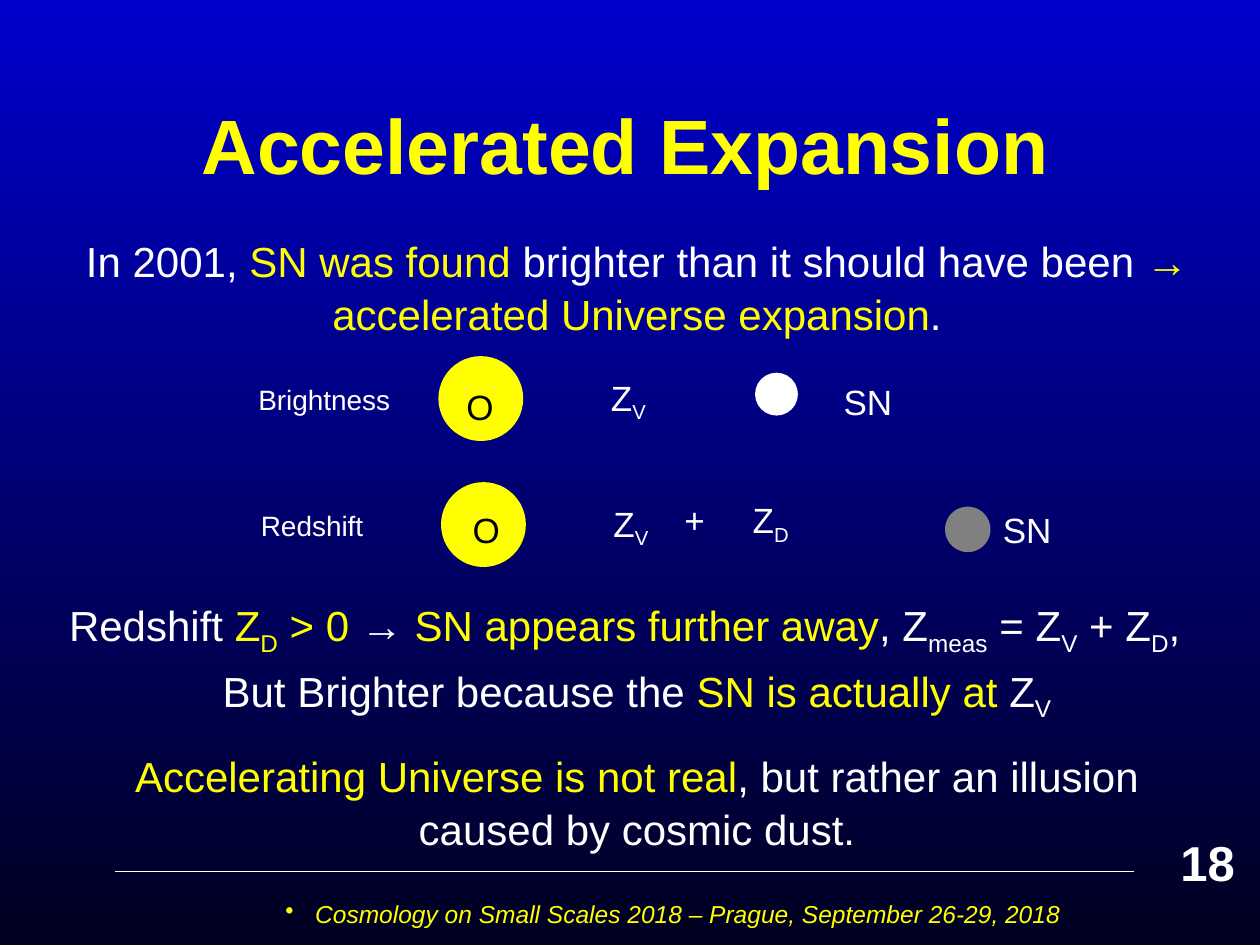
"""Build the slide that explains accelerated expansion as an effect of cosmic dust."""

import dataclasses
from typing import Any, Optional

import lxml.etree
import pptx
import pptx.dml.color
import pptx.enum.shapes
import pptx.enum.text
import pptx.oxml.ns
import pptx.util

Pt = pptx.util.Pt
Align = pptx.enum.text.PP_ALIGN
Anchor = pptx.enum.text.MSO_ANCHOR


@dataclasses.dataclass(frozen=True)
class Theme:
    font: str = "Arial"
    white: str = "FFFFFF"
    yellow: str = "FFFF00"
    black: str = "000000"
    grey: str = "808080"
    sky_top: str = "0000CC"
    sky_bottom: str = "000021"
    title: float = 44
    number: float = 28
    body: float = 24
    symbol: float = 20
    label: float = 16
    footer: float = 14
    body_spacing: float = 1.05


THEME = Theme()


@dataclasses.dataclass(frozen=True)
class Span:
    text: str
    color: Optional[str] = None
    lowered: bool = False


@dataclasses.dataclass(frozen=True)
class TextBox:
    left: float
    top: float
    width: float
    height: float
    spans: tuple[Span, ...]
    size: float
    color: str = THEME.white
    align: Any = Align.LEFT
    anchor: Any = Anchor.TOP
    spacing: float = THEME.body_spacing
    bold: bool = False
    italic: bool = False


@dataclasses.dataclass(frozen=True)
class Disc:
    left: float
    top: float
    diameter: float
    color: str


@dataclasses.dataclass(frozen=True)
class Row:
    left: float
    top: float
    label: str
    observer_left: float
    observer_top: float
    supernova: Disc
    supernova_left: float
    supernova_top: float


def rgb(color: str) -> pptx.dml.color.RGBColor:
    """Turn a hex string into a colour."""
    return pptx.dml.color.RGBColor.from_string(color)


def lowered(base: str, index: str, color: Optional[str] = None) -> tuple[Span, Span]:
    """Return a symbol followed by its lowered index."""
    return Span(base, color), Span(index, color, True)


def draw_text(page: Any, item: TextBox) -> Any:
    """Draw a one-paragraph text box and return the paragraph."""
    box = page.shapes.add_textbox(Pt(item.left), Pt(item.top), Pt(item.width), Pt(item.height))
    frame = box.text_frame
    frame.word_wrap = True
    frame.vertical_anchor = item.anchor
    para = frame.paragraphs[0]
    para.alignment = item.align
    para.line_spacing = item.spacing
    para.font.name = THEME.font
    para.font.size = Pt(item.size)
    para.font.bold = item.bold
    para.font.italic = item.italic
    para.font.color.rgb = rgb(item.color)
    for span in item.spans:
        run = para.add_run()
        run.text = span.text
        if span.color:
            run.font.color.rgb = rgb(span.color)
        if span.lowered:
            run._r.get_or_add_rPr().set("baseline", "-25000")
    return para


def draw_disc(page: Any, disc: Disc) -> None:
    """Draw a plain filled circle."""
    shape = page.shapes.add_shape(
        pptx.enum.shapes.MSO_SHAPE.OVAL,
        Pt(disc.left), Pt(disc.top), Pt(disc.diameter), Pt(disc.diameter))
    shape.shadow.inherit = False
    shape.fill.solid()
    shape.fill.fore_color.rgb = rgb(disc.color)
    shape.line.fill.background()


def draw_row(page: Any, row: Row) -> None:
    """Draw the label, observer, velocity shift and supernova of a row."""
    draw_disc(page, Disc(row.left + 110, row.top, 48.5, THEME.yellow))
    draw_disc(page, row.supernova)
    draw_text(page, TextBox(row.left, row.top + 10.5, 110, 27, (Span(row.label),), THEME.label))
    draw_text(page, TextBox(row.left + 201.5, row.top + 6.5, 53, 32, lowered("Z", "V"), THEME.symbol))
    draw_text(page, TextBox(row.observer_left, row.observer_top, 52, 32, (Span("O"),),
                            THEME.symbol, THEME.black))
    draw_text(page, TextBox(row.supernova_left, row.supernova_top, 56, 32, (Span("SN"),), THEME.symbol))


def draw_body(page: Any, left: float, top: float, height: float, spans: tuple[Span, ...]) -> None:
    """Draw a centred statement across the slide."""
    draw_text(page, TextBox(left, top, 668, height, spans, THEME.body, align=Align.CENTER))


def draw_footer(page: Any) -> None:
    """Draw the rule, the bulleted event line and the page number."""
    rule = page.shapes.add_connector(
        pptx.enum.shapes.MSO_CONNECTOR.STRAIGHT, Pt(66), Pt(498), Pt(648), Pt(498))
    rule.line.color.rgb = rgb(THEME.white)
    rule.line.width = Pt(0.75)
    lxml.etree.SubElement(rule._element.spPr, pptx.oxml.ns.qn("a:effectLst"))
    event = Span("Cosmology on Small Scales 2018 – Prague, September 26-29, 2018")
    para = draw_text(page, TextBox(156, 510, 500, 30, (event,), THEME.footer, THEME.yellow,
                                   spacing=1.0, italic=True))
    properties = para._p.get_or_add_pPr()
    properties.set("marL", str(Pt(17)))
    properties.set("indent", str(-Pt(17)))
    bullet = lxml.etree.Element(pptx.oxml.ns.qn("a:buChar"), char="•")
    properties.find(pptx.oxml.ns.qn("a:defRPr")).addprevious(bullet)
    draw_text(page, TextBox(667.5, 470.5, 52.5, 41, (Span("18"),), THEME.number, bold=True))


def main() -> None:
    """Build and save the deck."""
    deck = pptx.Presentation()
    deck.slide_width, deck.slide_height = Pt(720), Pt(540)
    page = deck.slides.add_slide(deck.slide_layouts[6])
    sky = page.background.fill
    sky.gradient()
    sky.gradient_angle = 270
    for stop, color in zip(sky.gradient_stops, (THEME.sky_top, THEME.sky_bottom)):
        stop.color.rgb = rgb(color)

    draw_footer(page)
    draw_text(page, TextBox(51.5, 37, 612, 90, (Span("Accelerated Expansion"),), THEME.title,
                            THEME.yellow, Align.CENTER, Anchor.MIDDLE, 1.0, bold=True))
    yellow = THEME.yellow
    draw_body(page, 30, 129.5, 66, (
        Span("In 2001, "), Span("SN was found ", yellow),
        Span("brighter than it should have been "),
        Span("→ accelerated Universe expansion", yellow), Span(".")))
    draw_body(page, 23, 337.5, 38, (
        Span("Redshift "), *lowered("Z", "D", yellow), Span(" > 0 ", yellow), Span("→"),
        Span(" SN appears further away", yellow), *lowered(", Z", "meas"),
        *lowered(" = Z", "V"), *lowered(" + Z", "D"), Span(",")))
    draw_body(page, 30, 375, 38, (
        Span("But Brighter because the "), Span("SN is actually at ", yellow), *lowered("Z", "V")))
    draw_body(page, 30, 424, 66, (
        Span("Accelerating Universe is not real", yellow),
        Span(", but rather an illusion caused by cosmic dust.")))

    draw_row(page, Row(140.5, 203.5, "Brightness", 259.5, 215.5,
                       Disc(431.5, 213, 24.5, THEME.white), 475, 212.5))
    draw_row(page, Row(142, 275.5, "Redshift", 263, 286,
                       Disc(540, 289.5, 26, THEME.grey), 566, 286))
    draw_text(page, TextBox(384, 280, 35, 32, (Span("+"),), THEME.symbol))
    draw_text(page, TextBox(423, 280, 60, 32, lowered("Z", "D"), THEME.symbol))
    deck.save("out.pptx")


if __name__ == "__main__":
    main()
